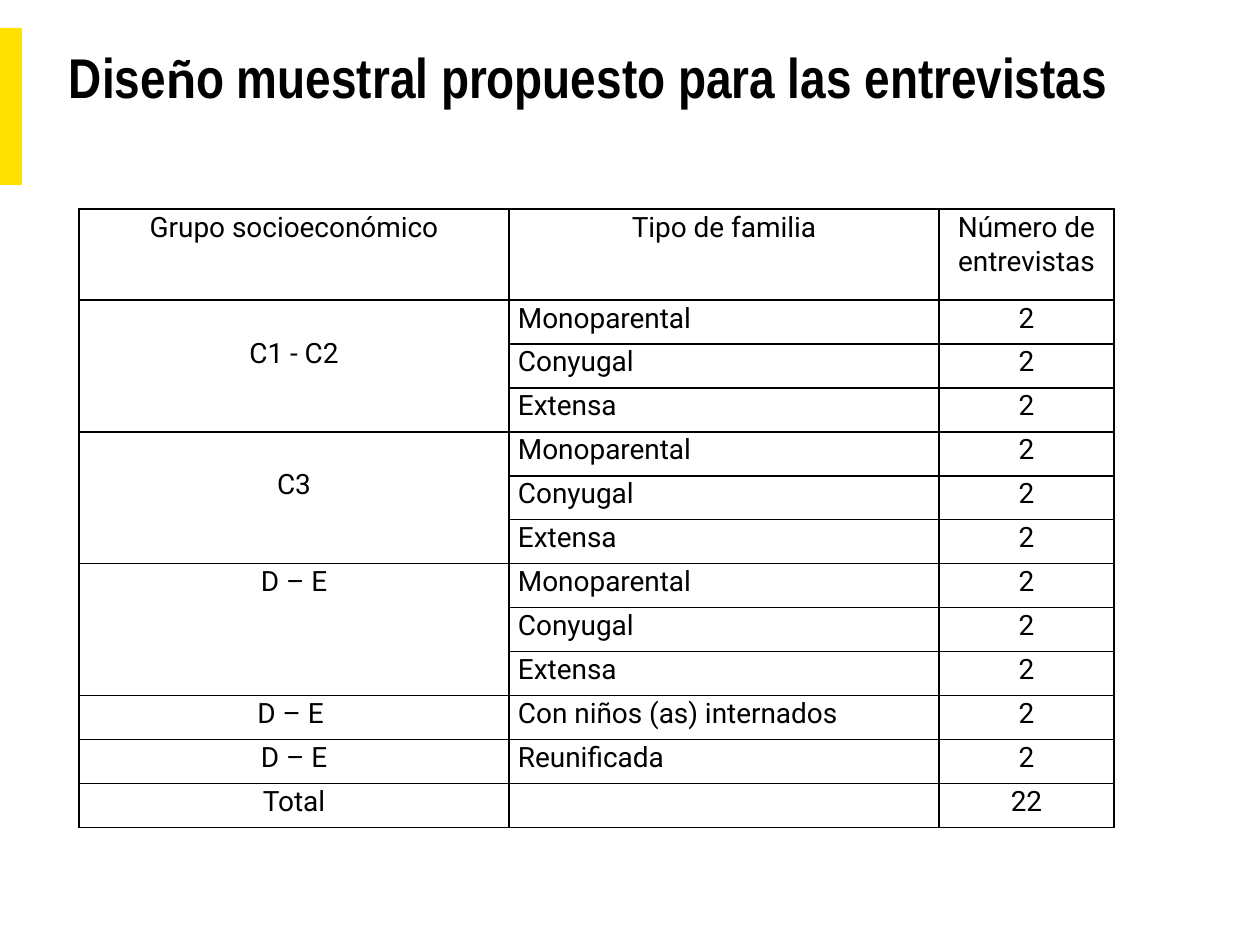
from pptx import Presentation
from pptx.dml.color import RGBColor
from pptx.enum.shapes import MSO_SHAPE as Shape
from pptx.enum.text import MSO_ANCHOR as Anchor, PP_ALIGN as Align
from pptx.oxml import parse_xml
from pptx.oxml.ns import nsdecls
from pptx.util import Pt

PX = 914400 // 126
BLACK, YELLOW = "000000", "FFE200"

HEADER = ["Grupo socioeconómico", "Tipo de familia", "Número de entrevistas"]
FAMILIES = ["Monoparental", "Conyugal", "Extensa"]
# Group, family types, whether the group name starts one line lower
GROUPS = [
    ("C1 - C2", FAMILIES, True),
    ("C3", FAMILIES, True),
    ("D – E", FAMILIES, False),
    ("D – E ", ["Con niños (as) internados"], False),
    ("D – E", ["Reunificada"], False),
]
INTERVIEWS = 2
COLUMN_WIDTHS = [430, 430, 175]
HEADER_HEIGHT, ROW_HEIGHT, LINE_HEIGHT = 91, 44, 35


def color(hex_code):
    return RGBColor.from_string(hex_code)


class SlideBuilder:
    title_font, accent_font, body_font = "Arial Narrow", "Calibri", "Roboto"
    title_size, body_size = 32, 16

    def __init__(self, slide):
        self.slide = slide

    def bar(self, left, top, width, height, fill):
        bar = self.slide.shapes.add_shape(
            Shape.RECTANGLE, left * PX, top * PX, width * PX, height * PX)
        bar.shadow.inherit = False
        bar.fill.solid()
        bar.fill.fore_color.rgb = color(fill)
        bar.line.fill.background()

    def title(self, left, top, width, height, parts):
        """Add a heading from (text, font name) parts."""
        frame = self.slide.shapes.add_textbox(
            left * PX, top * PX, width * PX, height * PX).text_frame
        frame.word_wrap = True
        frame.vertical_anchor = Anchor.TOP
        frame.margin_left = frame.margin_right = 6 * PX
        frame.margin_top = 15 * PX
        heading = frame.paragraphs[0]
        heading.font.size = Pt(self.title_size)
        heading.font.bold = True
        heading.font.color.rgb = color(BLACK)
        for text, font_name in parts:
            run = heading.add_run()
            run.text = text
            run.font.name = font_name

    def table(self, left, top, widths, heights):
        table = self.slide.shapes.add_table(
            len(heights), len(widths), left * PX, top * PX,
            sum(widths) * PX, sum(heights) * PX).table
        table.first_row = table.horz_banding = False
        for column, width in zip(table.columns, widths):
            column.width = width * PX
        for row, height in zip(table.rows, heights):
            row.height = height * PX
        for cell in table.iter_cells():
            self.frame_cell(cell)
        return table

    def frame_cell(self, cell):
        """Give a cell its margins, black borders and no fill."""
        cell.margin_left = cell.margin_right = 9 * PX
        cell.margin_top = cell.margin_bottom = 0
        properties = cell._tc.get_or_add_tcPr()
        for side in "LRTB":
            properties.append(parse_xml(
                f'<a:ln{side} {nsdecls("a")} w="{Pt(1)}"><a:solidFill>'
                f'<a:srgbClr val="{BLACK}"/></a:solidFill></a:ln{side}>'))
        cell.fill.background()

    def cell_text(self, cell, text, align=Align.CENTER):
        paragraph = cell.text_frame.paragraphs[0]
        paragraph.text = text
        paragraph.alignment = align
        paragraph.line_spacing = 1.07
        paragraph.font.size = Pt(self.body_size)
        paragraph.font.name = self.body_font
        paragraph.font.color.rgb = color(BLACK)


def main():
    deck = Presentation()
    deck.slide_width, deck.slide_height = 1260 * PX, 945 * PX
    builder = SlideBuilder(deck.slides.add_slide(deck.slide_layouts[6]))

    builder.bar(0, 28, 22, 157, YELLOW)
    builder.title(63, 28, 1134, 157, [
        ("Dise", builder.title_font),
        ("ñ", builder.accent_font),
        ("o muestral propuesto para las entrevistas", builder.title_font),
    ])

    interview_rows = sum(len(families) for _, families, _ in GROUPS)
    heights = [HEADER_HEIGHT] + [ROW_HEIGHT] * (interview_rows + 1)
    sample = builder.table(79, 209, COLUMN_WIDTHS, heights)
    for column, heading in enumerate(HEADER):
        builder.cell_text(sample.cell(0, column), heading)

    row = 1
    for group, families, lowered in GROUPS:
        group_cell = sample.cell(row, 0)
        if len(families) > 1:
            group_cell.merge(sample.cell(row + len(families) - 1, 0))
        if lowered:
            group_cell.margin_top = LINE_HEIGHT * PX
        builder.cell_text(group_cell, group)
        for family in families:
            builder.cell_text(sample.cell(row, 1), family, Align.LEFT)
            builder.cell_text(sample.cell(row, 2), str(INTERVIEWS))
            row += 1
    builder.cell_text(sample.cell(row, 0), "Total")
    builder.cell_text(sample.cell(row, 2), str(INTERVIEWS * interview_rows))

    deck.save("out.pptx")


if __name__ == "__main__":
    main()
